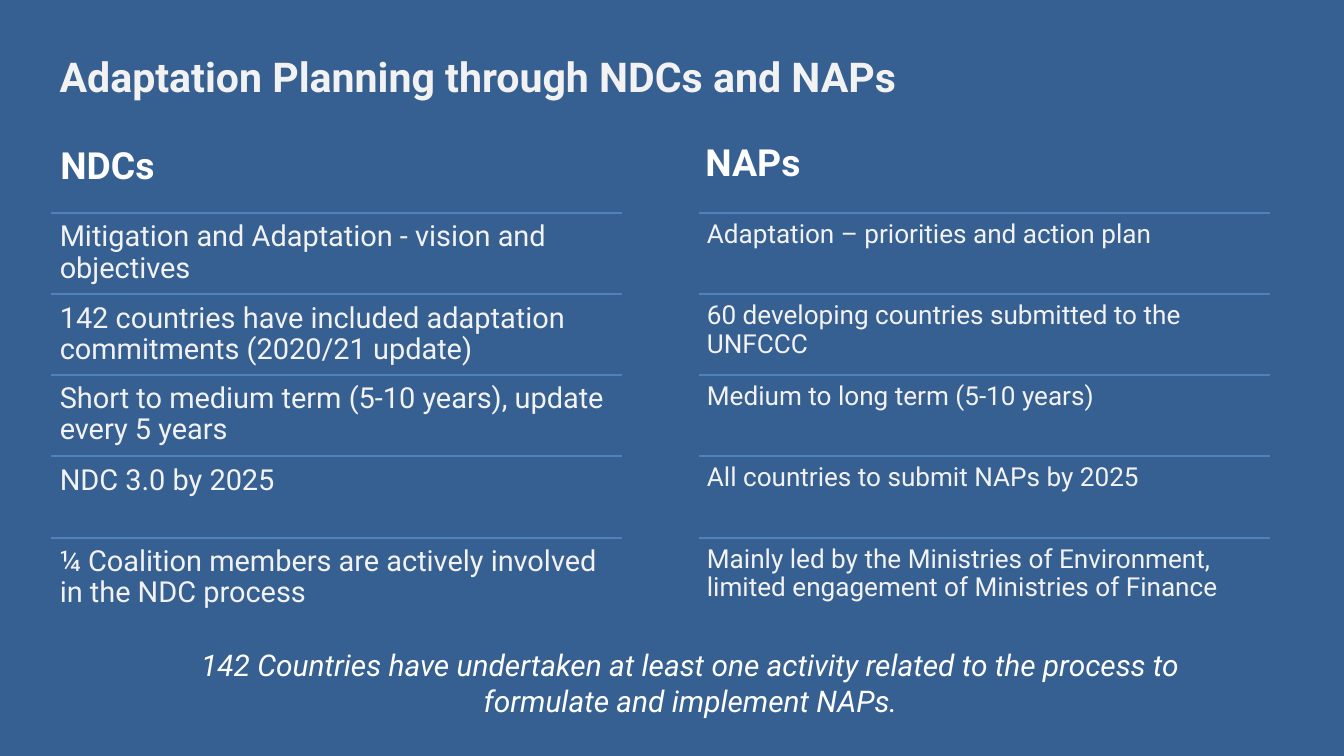
"""Build the slide that compares NDCs and NAPs in adaptation planning."""
from lxml.etree import SubElement
from pptx import Presentation
from pptx.dml.color import RGBColor
from pptx.enum.text import MSO_ANCHOR, PP_ALIGN
from pptx.oxml.ns import qn
from pptx.util import Pt

PX = 9144
BLUE = RGBColor(0x37, 0x60, 0x92)
RULE = RGBColor(0x4F, 0x81, 0xBD)
WHITE = RGBColor(0xFF, 0xFF, 0xFF)
PALE = RGBColor(0xF2, 0xF2, 0xF2)

TOP, ROW, WIDTH = 317, 120.75, 850
COLUMNS = [
    {
        "heading": "NDCs", "heading_box": (80, 191, 846, 92),
        "left": 76, "size": 31, "inset": 13,
        "rows": [
            "Mitigation and Adaptation - vision and objectives",
            "142 countries have included adaptation commitments (2020/21 update)",
            "Short to medium term (5-10 years), update every 5 years",
            "NDC 3.0 by 2025",
            "¼ Coalition members are actively involved in the NDC process",
        ],
    },
    {
        "heading": "NAPs", "heading_box": (1040, 189, 850, 89),
        "left": 1040, "size": 28, "inset": 12,
        "rows": [
            "Adaptation – priorities and action plan",
            "60 developing countries submitted to the UNFCCC",
            "Medium to long term (5-10 years)",
            "All countries to submit NAPs by 2025",
            "Mainly led by the Ministries of Environment, "
            "limited engagement of Ministries of Finance",
        ],
    },
]


def write_text(tf, text, size, color=WHITE, bold=False, italic=False,
               align=PP_ALIGN.LEFT, spacing=1.0, font="Roboto"):
    p = tf.paragraphs[0]
    p.alignment = align
    p.line_spacing = spacing
    r = p.add_run()
    r.text = text
    r.font.name = font
    r.font.size = Pt(size)
    r.font.bold = bold
    r.font.italic = italic
    r.font.color.rgb = color


class Deck:
    """Holds the style and the current slide."""

    def __init__(self, width, height):
        self.prs = Presentation()
        self.prs.slide_width = width * PX
        self.prs.slide_height = height * PX
        self.slide = self.prs.slides.add_slide(self.prs.slide_layouts[6])
        fill = self.slide.background.fill
        fill.solid()
        fill.fore_color.rgb = BLUE

    def text(self, box, text, shapes=None, inset=(10, 5),
             anchor=MSO_ANCHOR.TOP, **fmt):
        shapes = shapes or self.slide.shapes
        tf = shapes.add_textbox(*(v * PX for v in box)).text_frame
        tf.word_wrap = True
        tf.vertical_anchor = anchor
        tf.margin_left = tf.margin_right = inset[0] * PX
        tf.margin_top = tf.margin_bottom = inset[1] * PX
        write_text(tf, text, **fmt)

    def rule(self, shapes, x, y, width):
        ends = (x, y, x + width, y)
        line = shapes.add_connector(1, *(v * PX for v in ends))
        line.line.color.rgb = RULE
        line.line.width = Pt(2)
        SubElement(line._element.spPr, qn("a:effectLst"))

    def column(self, heading, heading_box, left, size, inset, rows):
        self.text(heading_box, heading, anchor=MSO_ANCHOR.BOTTOM,
                  size=40, bold=True)
        shapes = self.slide.shapes.add_group_shape().shapes
        for i, row in enumerate(rows):
            y = round(TOP + i * ROW)
            self.rule(shapes, left, y, WIDTH)
            self.text((left, y, WIDTH, 121), row, shapes, (inset, inset),
                      size=size, color=PALE, spacing=0.9)


def main():
    deck = Deck(2000, 1125)
    deck.text((-75, 46, 1574, 134), "Adaptation Planning through NDCs and NAPs",
              anchor=MSO_ANCHOR.MIDDLE, size=44, color=PALE, bold=True,
              align=PP_ALIGN.CENTER)
    for column in COLUMNS:
        deck.column(**column)
    deck.text((218, 955, 1620, 170),
              "142 Countries have undertaken at least one activity related to "
              "the process to formulate and implement NAPs.",
              inset=(15, 7), size=32, italic=True, align=PP_ALIGN.CENTER)
    deck.prs.save("out.pptx")


if __name__ == "__main__":
    main()
